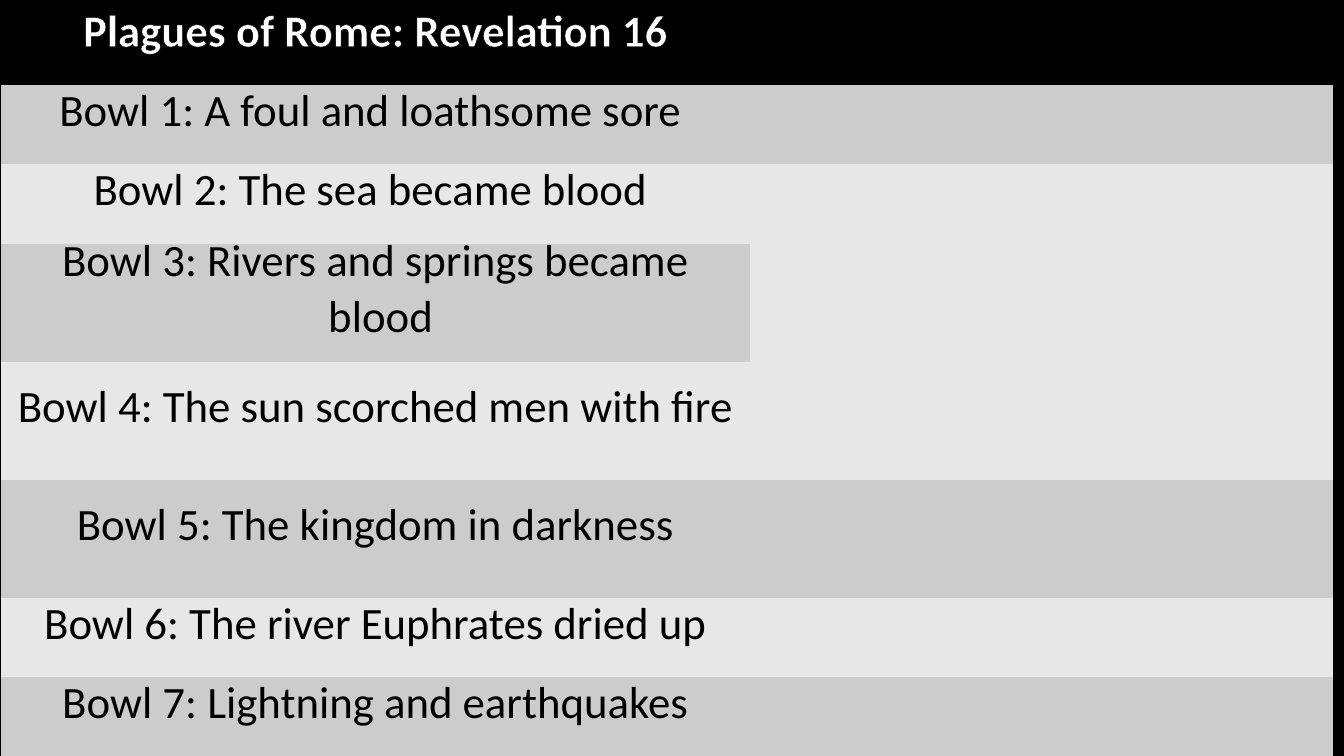
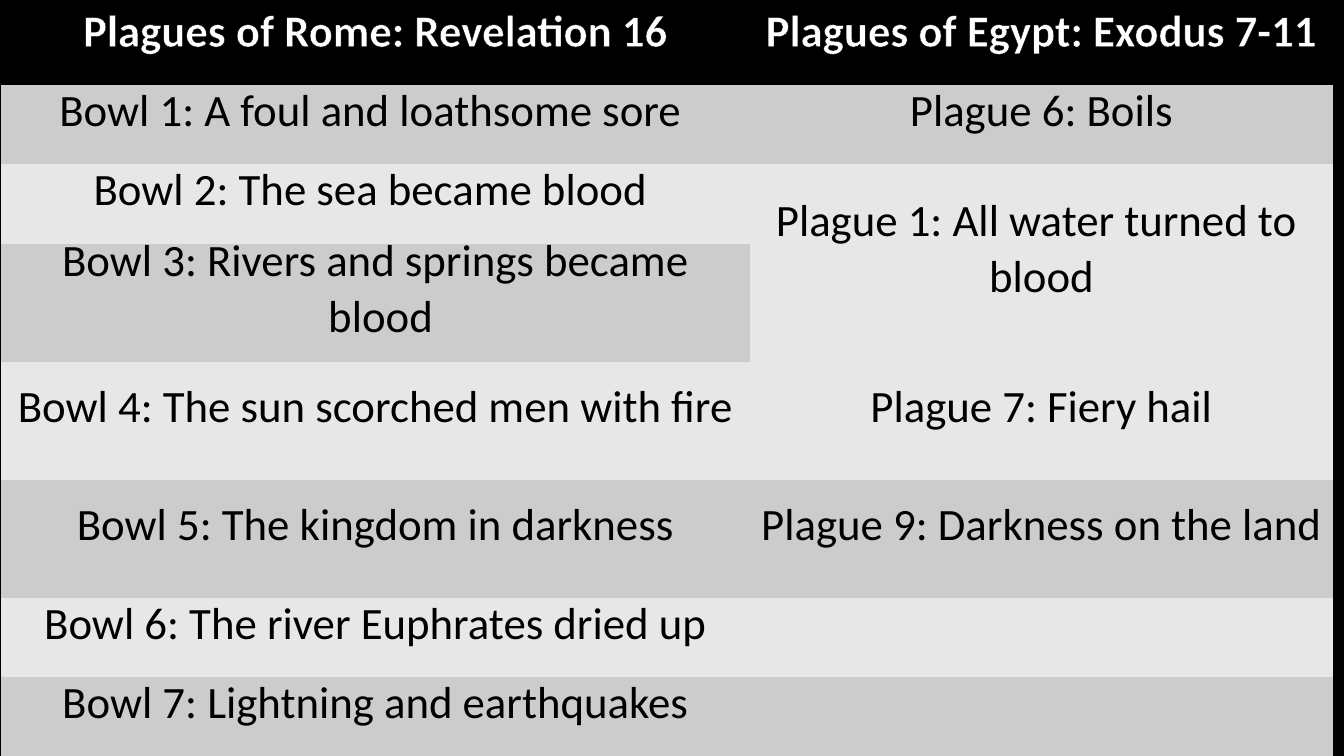
import dataclasses

import lxml.etree
import pptx
import pptx.dml.color
import pptx.enum.text
import pptx.oxml.ns
import pptx.presentation
import pptx.table
import pptx.util

Inches = pptx.util.Inches
Pt = pptx.util.Pt

BLACK = "000000"
WHITE = "FFFFFF"
DARK_BAND = "CCCCCC"
LIGHT_BAND = "E7E7E7"
FONT_NAME = "Calibri"
NO_STYLE_NO_GRID = "{2D5ABB26-0587-4C30-8999-92F81FD0307C}"
COLUMN_WIDTHS = (7.43, 5.78)
SHORT_ROW = 0.79
TALL_ROW = 1.17


@dataclasses.dataclass(frozen=True)
class PlagueRow:
    bowl: tuple[str, ...]
    plague: tuple[str, ...] = ()
    height: float = SHORT_ROW
    plague_span: int = 1


ROWS = (
    PlagueRow(("Plagues of Rome: Revelation 16",), ("Plagues of Egypt: Exodus 7-11",)),
    PlagueRow(("Bowl 1: A foul and loathsome sore ",), ("Plague 6: Boils",)),
    PlagueRow(
        ("Bowl 2: The sea became blood ",),
        ("Plague 1: All water turned to ", "blood"),
        plague_span=2,
    ),
    PlagueRow(("Bowl 3: Rivers and springs became", " blood"), height=TALL_ROW),
    PlagueRow(
        ("Bowl 4: The sun scorched men with fire",), ("Plague 7: Fiery hail",), TALL_ROW
    ),
    PlagueRow(
        ("Bowl 5: The kingdom in darkness",), ("Plague 9: Darkness on the land",), TALL_ROW
    ),
    PlagueRow(("Bowl 6: The river Euphrates dried up",)),
    PlagueRow(("Bowl 7: Lightning and earthquakes",)),
)


def color(value: str) -> pptx.dml.color.RGBColor:
    return pptx.dml.color.RGBColor.from_string(value)


def outline_text(run: pptx.text.text._Run, value: str, width: float) -> None:
    qualified = pptx.oxml.ns.qn
    line = lxml.etree.Element(qualified("a:ln"), w=str(Pt(width)))
    fill = lxml.etree.SubElement(line, qualified("a:solidFill"))
    lxml.etree.SubElement(fill, qualified("a:srgbClr"), val=value)
    run.font._element.insert(0, line)


def fill_cell(
    cell: pptx.table._Cell, lines: tuple[str, ...], band: str, is_header: bool
) -> None:
    cell.fill.solid()
    cell.fill.fore_color.rgb = color(band)
    cell.vertical_anchor = pptx.enum.text.MSO_ANCHOR.MIDDLE
    cell.margin_left = cell.margin_right = Inches(0.07)
    cell.margin_top = cell.margin_bottom = Inches(0)
    for index, text in enumerate(lines):
        frame = cell.text_frame
        paragraph = frame.add_paragraph() if index else frame.paragraphs[0]
        paragraph.alignment = pptx.enum.text.PP_ALIGN.CENTER
        paragraph.line_spacing = Pt(20)
        paragraph.space_before = Pt(20 if index else 0)
        run = paragraph.add_run()
        run.text = text
        run.font.name = FONT_NAME
        run.font.size = Pt(32)
        run.font.bold = is_header
        run.font.color.rgb = color(WHITE if is_header else BLACK)
        if is_header:
            outline_text(run, BLACK, 0.75)


def add_plague_slide(
    presentation: pptx.presentation.Presentation, shows_egypt: bool
) -> None:
    slide = presentation.slides.add_slide(presentation.slide_layouts[6])
    slide.background.fill.solid()
    slide.background.fill.fore_color.rgb = color(BLACK)
    shape = slide.shapes.add_table(
        len(ROWS),
        len(COLUMN_WIDTHS),
        Inches(0.01),
        Inches(0.05),
        Inches(sum(COLUMN_WIDTHS)),
        Inches(sum(row.height for row in ROWS)),
    )
    table = shape.table
    table.horz_banding = False
    style = table._tbl.tblPr.find(pptx.oxml.ns.qn("a:tableStyleId"))
    style.text = NO_STYLE_NO_GRID
    for column, width in zip(table.columns, COLUMN_WIDTHS):
        column.width = Inches(width)
    for index, row in enumerate(ROWS):
        table.rows[index].height = Inches(row.height)
        is_header = index == 0
        band = BLACK if is_header else DARK_BAND if index % 2 else LIGHT_BAND
        fill_cell(table.cell(index, 0), row.bowl, band, is_header)
        plague_cell = table.cell(index, 1)
        if row.plague_span > 1:
            plague_cell.merge(table.cell(index + row.plague_span - 1, 1))
        if not plague_cell.is_spanned:
            fill_cell(plague_cell, row.plague if shows_egypt else (), band, is_header)


def main() -> None:
    presentation = pptx.Presentation()
    presentation.slide_width = Inches(13.33)
    presentation.slide_height = Inches(7.5)
    for shows_egypt in (False, True):
        add_plague_slide(presentation, shows_egypt)
    presentation.save("out.pptx")


if __name__ == "__main__":
    main()
